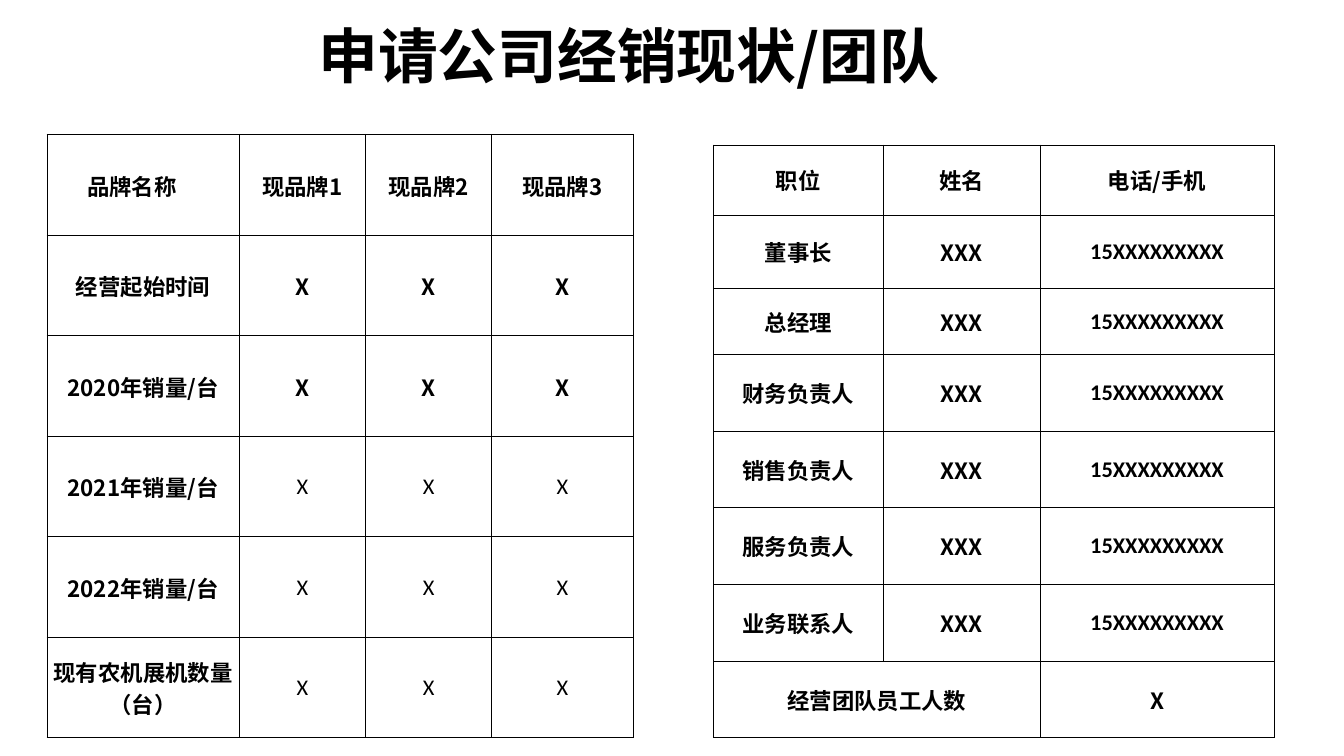
"""Build a slide with a dealer's sales status table and its team contact table."""
from lxml import etree
from pptx import Presentation
from pptx.dml.color import RGBColor
from pptx.enum.text import MSO_ANCHOR, PP_ALIGN
from pptx.oxml.ns import qn
from pptx.util import Inches, Pt

BLACK = RGBColor(0x00, 0x00, 0x00)
WHITE = RGBColor(0xFF, 0xFF, 0xFF)
CENTER = PP_ALIGN.CENTER
TOP, MIDDLE = MSO_ANCHOR.TOP, MSO_ANCHOR.MIDDLE
CJK, LATIN, SERIF = "Noto Sans CJK SC", "Calibri", "Times New Roman"


def write(frame, text, size, font=CJK, bold=True):
    paragraph = frame.paragraphs[0]
    paragraph.alignment = CENTER
    run = paragraph.add_run()
    run.text = text
    for key, value in {"name": font, "size": Pt(size), "bold": bold}.items():
        setattr(run.font, key, value)
    run.font.color.rgb = BLACK
    east_asian = etree.SubElement(run.font._element, qn("a:ea"))
    east_asian.set("typeface", CJK)


def add_grid(left, top, widths, heights, margins):
    grid = slide.shapes.add_table(
        len(heights), len(widths), Inches(left), Inches(top),
        Inches(sum(widths)), Inches(sum(heights))).table
    grid.first_row = grid.horz_banding = False
    for column, width in zip(grid.columns, widths):
        column.width = Inches(width)
    for row, height in zip(grid.rows, heights):
        row.height = Inches(height)
    for cell in grid.iter_cells():
        cell.vertical_anchor = MIDDLE
        for side, margin in margins.items():
            setattr(cell, f"margin_{side}", Inches(margin))
        properties = cell._tc.get_or_add_tcPr()
        for edge in ("lnL", "lnR", "lnT", "lnB"):
            border = etree.SubElement(properties, qn(f"a:{edge}"), w=str(Pt(0.5)))
            border_fill = etree.SubElement(border, qn("a:solidFill"))
            etree.SubElement(border_fill, qn("a:srgbClr"), val=str(BLACK))
        cell.fill.solid()
        cell.fill.fore_color.rgb = WHITE
    return grid


prs = Presentation()
prs.slide_width, prs.slide_height = Inches(10), Inches(10 * 9 / 16)
slide = prs.slides.add_slide(prs.slide_layouts[5])

title = slide.shapes.title
title_box = {"left": 1.61, "top": 0.09, "width": 6.14, "height": 0.75}
for key, value in title_box.items():
    setattr(title, key, Inches(value))
title.text_frame.vertical_anchor = TOP
write(title.text_frame, "申请公司经销现状/团队", 32)

sales_rows = [
    ["品牌名称　", "现品牌1", "现品牌2", "现品牌3"],
    ["经营起始时间"] + ["X"] * 3,
    *[[f"{year}年销量/台"] + ["X"] * 3 for year in (2020, 2021, 2022)],
    ["现有农机展机数量（台）"] + ["X"] * 3,
]
sales = add_grid(0.35, 1, [1.43, 0.94, 0.94, 1.05], [4.49 / 6] * 6,
                 {"left": 0.01, "top": 0.01, "right": 0.01, "bottom": 0})
for r, values in enumerate(sales_rows):
    for c, value in enumerate(values):
        plain = r >= 3 and c > 0
        write(sales.cell(r, c).text_frame, value, 12, LATIN if plain else CJK, not plain)

positions = ["董事长", "总经理", "财务负责人", "销售负责人", "服务负责人", "业务联系人"]
team_rows = [
    ["职位", "姓名", "电话/手机"],
    *[[position, "XXX", "15XXXXXXXXX"] for position in positions],
]
team = add_grid(5.31, 1.08, [1.26, 1.17, 1.74], [0.52, 0.55, 0.49] + [0.57] * 5,
                dict.fromkeys(("left", "top", "right", "bottom"), 0.06))
for r, values in enumerate(team_rows):
    fonts = [SERIF if r >= 3 else CJK, CJK, LATIN if r else CJK]
    for c, (value, font) in enumerate(zip(values, fonts)):
        write(team.cell(r, c).text_frame, value, 12, font)

team.cell(7, 0).merge(team.cell(7, 1))
write(team.cell(7, 0).text_frame, "经营团队员工人数", 12)
write(team.cell(7, 2).text_frame, "X", 12)

prs.save("out.pptx")
